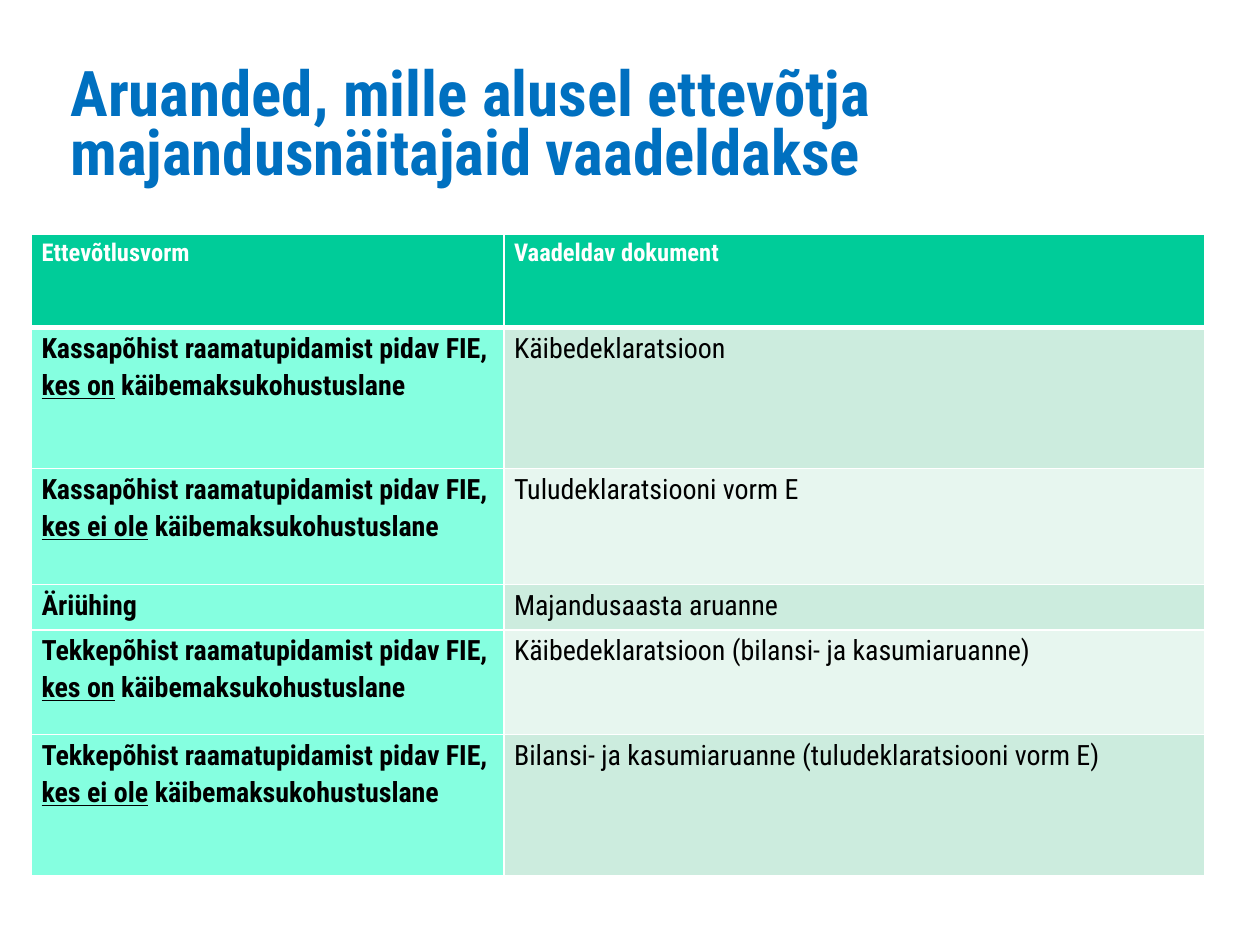
"""Builds a slide listing the reports used to assess a business by its legal form."""
import pptx
import pptx.dml.color
import pptx.enum.text
import pptx.oxml
import pptx.oxml.ns
import pptx.util

Inches = pptx.util.Inches
FONT = "Roboto Condensed"
COLORS = {
    "title": "0070C0",
    "header": "00CC99",
    "form": "85FFE0",
    "band_dark": "CCECDE",
    "band_light": "E7F6EF",
    "white": "FFFFFF",
    "black": "000000",
}
COLUMN_WIDTHS = [3.75, 5.56]
ROW_HEIGHTS = [0.74, 1.12, 0.92, 0.36, 0.83, 1.12]
HEADINGS = ["Ettevõtlusvorm", "Vaadeldav dokument"]
CASH_BASED = "Kassapõhist raamatupidamist pidav FIE, "
ACCRUAL_BASED = "Tekkepõhist raamatupidamist pidav FIE, "
TAXABLE = " käibemaksukohustuslane"
REPORTS = [
    ([CASH_BASED, "kes on", TAXABLE], "Käibedeklaratsioon"),
    ([CASH_BASED, "kes ei ole", TAXABLE], "Tuludeklaratsiooni vorm E"),
    (["Äriühing"], "Majandusaasta aruanne"),
    ([ACCRUAL_BASED, "kes on", TAXABLE], "Käibedeklaratsioon (bilansi- ja kasumiaruanne)"),
    ([ACCRUAL_BASED, "kes ei ole", TAXABLE], "Bilansi- ja kasumiaruanne (tuludeklaratsiooni vorm E)"),
]


def rgb(name):
    """Return the named colour."""
    return pptx.dml.color.RGBColor.from_string(COLORS[name])


def add_run(paragraph, text, size, color, bold=True, underline=False):
    """Append one formatted run to a paragraph."""
    run = paragraph.add_run()
    run.text = text
    run.font.name = FONT
    run.font.size = pptx.util.Pt(size)
    run.font.bold = bold
    if underline:
        run.font.underline = True
    run.font.color.rgb = rgb(color)


def add_title(slide, text):
    """Add the slide title."""
    title = slide.shapes.add_textbox(Inches(0.56), Inches(0.33), Inches(8.84), Inches(1.38))
    frame = title.text_frame
    frame.word_wrap = True
    frame.vertical_anchor = pptx.enum.text.MSO_ANCHOR.MIDDLE
    frame.margin_left = frame.margin_right = frame.margin_top = frame.margin_bottom = 0
    frame.paragraphs[0].line_spacing = 0.77
    add_run(frame.paragraphs[0], text, 36, "title")


def set_borders(cell, bottom=1, top=1):
    """Draw white lines of the given point widths around a cell."""
    properties = cell._tc.get_or_add_tcPr()
    widths = {"lnL": 1, "lnR": 1, "lnT": top, "lnB": bottom}
    for position, (side, width) in enumerate(widths.items()):
        line = pptx.oxml.parse_xml(
            f'<a:{side} {pptx.oxml.ns.nsdecls("a")} w="{pptx.util.Pt(width)}">'
            f'<a:solidFill><a:srgbClr val="{COLORS["white"]}"/></a:solidFill></a:{side}>'
        )
        properties.insert(position, line)


def style_cell(cell, fill, justified=True):
    """Fill a cell, set its margins and return its paragraph."""
    cell.fill.solid()
    cell.fill.fore_color.rgb = rgb(fill)
    cell.margin_left = cell.margin_right = Inches(0.08)
    cell.margin_top = cell.margin_bottom = 0
    paragraph = cell.text_frame.paragraphs[0]
    paragraph.line_spacing = 1.15
    if justified:
        paragraph.alignment = pptx.enum.text.PP_ALIGN.JUSTIFY
    return paragraph


def add_header_row(table):
    """Fill the heading row, set off by a thicker bottom line."""
    for column, heading in enumerate(HEADINGS):
        cell = table.cell(0, column)
        add_run(style_cell(cell, "header"), heading, 14, "white")
        set_borders(cell, bottom=3)


def add_report_row(table, row, form_parts, document):
    """Fill one row with a business form and its document."""
    form_cell, document_cell = table.cell(row, 0), table.cell(row, 1)
    form = style_cell(form_cell, "form", justified=False)
    for part in form_parts:
        add_run(form, part, 16, "black", underline=part.startswith("kes"))
    band = "band_dark" if row % 2 else "band_light"
    add_run(style_cell(document_cell, band), document, 16, "black", bold=False)
    for cell in (form_cell, document_cell):
        set_borders(cell, top=3 if row == 1 else 1)


def add_report_table(slide):
    """Add the table of business forms and documents."""
    table = slide.shapes.add_table(
        len(ROW_HEIGHTS), len(COLUMN_WIDTHS), Inches(0.25), Inches(1.86),
        Inches(sum(COLUMN_WIDTHS)), Inches(sum(ROW_HEIGHTS)),
    ).table
    for column, width in zip(table.columns, COLUMN_WIDTHS):
        column.width = Inches(width)
    for row, height in zip(table.rows, ROW_HEIGHTS):
        row.height = Inches(height)
    add_header_row(table)
    for row, (form_parts, document) in enumerate(REPORTS, start=1):
        add_report_row(table, row, form_parts, document)


def main():
    """Build and save the presentation."""
    presentation = pptx.Presentation()
    presentation.slide_width = Inches(10)
    presentation.slide_height = Inches(7.5)
    slide = presentation.slides.add_slide(presentation.slide_layouts[6])
    add_title(slide, "Aruanded, mille alusel ettevõtja majandusnäitajaid vaadeldakse")
    add_report_table(slide)
    presentation.save("out.pptx")


if __name__ == "__main__":
    main()
